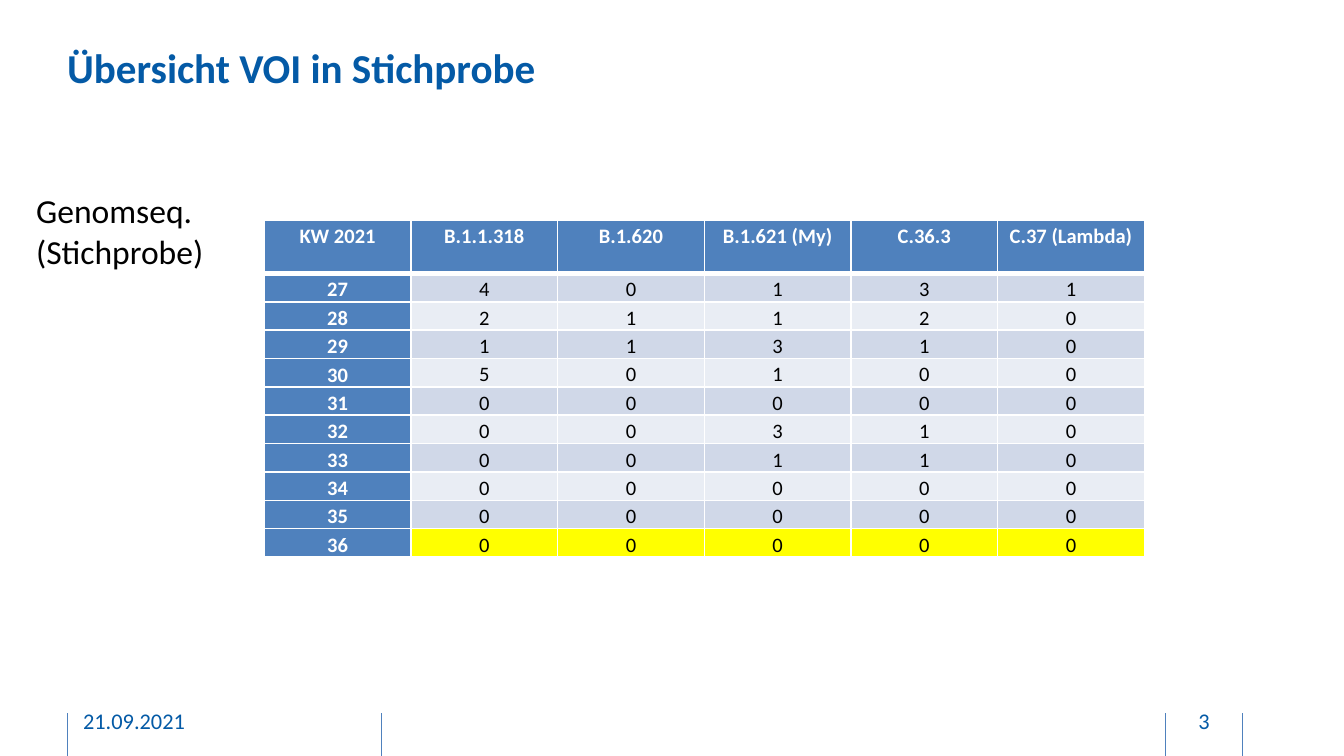
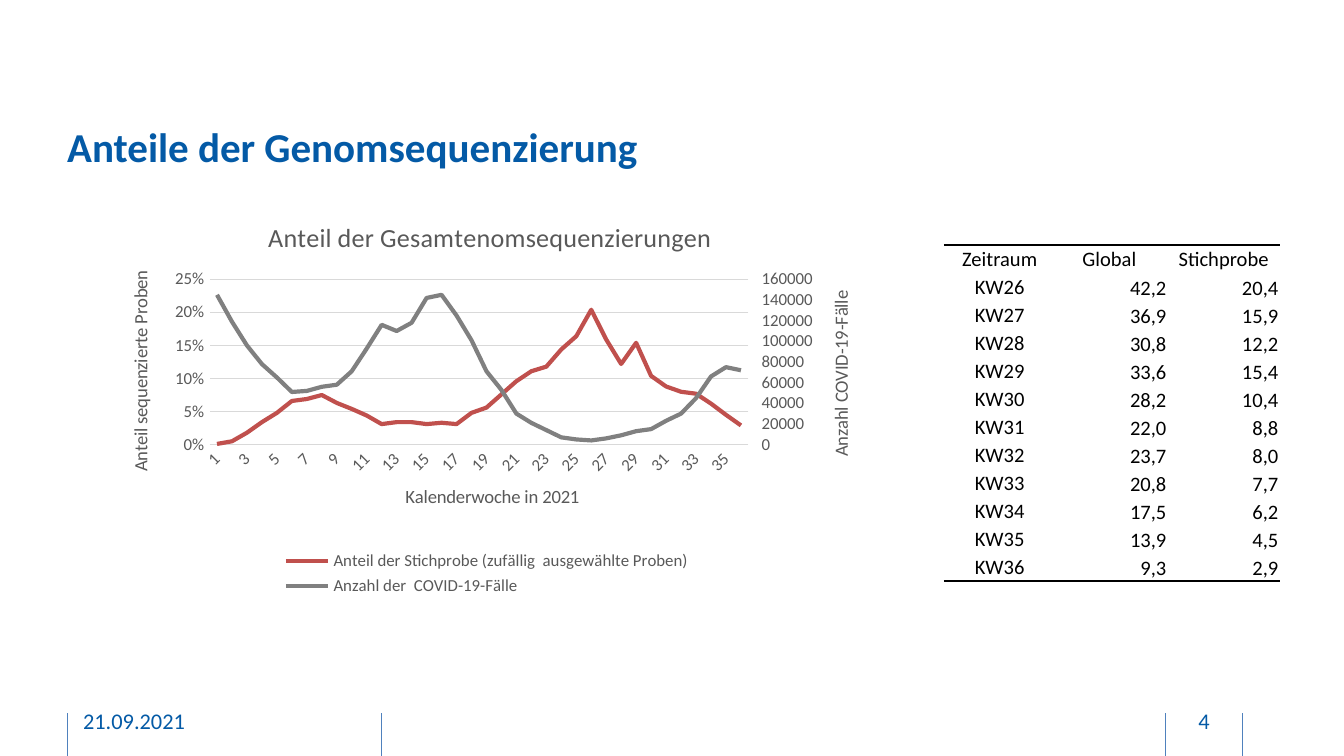
from copy import deepcopy

from lxml import etree
from pptx import Presentation
from pptx.chart import axis as ax_api
from pptx.chart.data import CategoryChartData
from pptx.dml.color import RGBColor
from pptx.enum import chart as ch, shapes, text
from pptx.oxml import parse_xml
from pptx.oxml.ns import nsdecls, qn
from pptx.util import Pt

FONT = "Calibri"
PLAIN_TABLE = "{2D5ABB26-0587-4C30-8999-92F81FD0307C}"
BLUE, ACCENT, WHITE, BLACK = "045AA6", "4F81BD", "FFFFFF", "000000"
BAND_DARK, BAND_LIGHT, YELLOW = "D0D8E8", "E9EDF4", "FFFF00"
GREY, GRID, RED, LINE_GREY = "595959", "D9D9D9", "C0504D", "808080"
LEFT, CENTER, RIGHT = text.PP_ALIGN.LEFT, text.PP_ALIGN.CENTER, text.PP_ALIGN.RIGHT
TOP, MIDDLE, BOTTOM = text.MSO_ANCHOR.TOP, text.MSO_ANCHOR.MIDDLE, text.MSO_ANCHOR.BOTTOM
DATE = "21.09.2021"

VARIANTS = ["KW 2021", "B.1.1.318", "B.1.620", "B.1.621 (My)", "C.36.3", "C.37 (Lambda)"]
VOI_COUNTS = [
    (27, 4, 0, 1, 3, 1), (28, 2, 1, 1, 2, 0), (29, 1, 1, 3, 1, 0), (30, 5, 0, 1, 0, 0),
    (31, 0, 0, 0, 0, 0), (32, 0, 0, 3, 1, 0), (33, 0, 0, 1, 1, 0), (34, 0, 0, 0, 0, 0),
    (35, 0, 0, 0, 0, 0), (36, 0, 0, 0, 0, 0),
]
SHARE_ROWS = [
    ("Zeitraum", "Global ", "Stichprobe"),
    ("KW26", "42,2", "20,4"), ("KW27", "36,9", "15,9"), ("KW28", "30,8", "12,2"),
    ("KW29", "33,6", "15,4"), ("KW30", "28,2", "10,4"), ("KW31", "22,0", "8,8"),
    ("KW32", "23,7", "8,0"), ("KW33", "20,8", "7,7"), ("KW34", "17,5", "6,2"),
    ("KW35", "13,9", "4,5"), ("KW36", "9,3", "2,9"),
]
SAMPLE_SHARE = [
    0.001, 0.005, 0.018, 0.034, 0.048, 0.066, 0.069, 0.075, 0.063, 0.054, 0.044, 0.031,
    0.034, 0.034, 0.031, 0.033, 0.031, 0.048, 0.056, 0.076, 0.096, 0.111, 0.118, 0.144,
    0.164, 0.204, 0.159, 0.122, 0.154, 0.104, 0.088, 0.08, 0.077, 0.062, 0.045, 0.029,
]
CASES_THOUSAND = [
    145, 119, 96, 78, 65, 51, 52, 56, 58, 71, 93, 116, 110, 118, 142, 145, 125, 101,
    71, 53, 30, 21, 14, 7, 5, 4, 6, 9, 13, 15, 23, 30, 45, 66, 75, 72,
]


def rgb(value):
    """Turn a hex string into a colour."""
    return RGBColor.from_string(value)


def set_attrs(obj, **values):
    """Set several attributes of one object."""
    for name, value in values.items():
        setattr(obj, name, value)


def set_font(font, size, color, bold=False):
    """Give a font the deck's typeface, a size and a colour."""
    set_attrs(font, name=FONT, size=Pt(size), bold=bold)
    font.color.rgb = rgb(color)


def write(tf, content, size, color, bold=False, align=LEFT, spacing=None):
    """Fill a text frame with one formatted paragraph."""
    p = tf.paragraphs[0]
    p.text = content
    set_attrs(p, alignment=align, line_spacing=spacing)
    for r in p.runs:
        set_font(r.font, size, color, bold)


def set_frame(tf, anchor, left=0, top=0, right=0, bottom=0):
    """Set the anchor and the insets of a text frame or cell."""
    set_attrs(tf, vertical_anchor=anchor, margin_left=Pt(left), margin_top=Pt(top),
              margin_right=Pt(right), margin_bottom=Pt(bottom))


def add_title(s, content, top):
    """Place and format the slide title."""
    sp = s.shapes.title
    set_attrs(sp, left=Pt(36), top=Pt(top), width=Pt(628.5), height=Pt(56))
    set_frame(sp.text_frame, MIDDLE)
    write(sp.text_frame, content, 22, BLUE, True)


def add_footer(s, number, top=375, bottom=405):
    """Draw the footer rules, the date and the slide number."""
    for x in (36, 204.5, 624.3, 665.8):
        c = s.shapes.add_connector(shapes.MSO_CONNECTOR.STRAIGHT,
                                   Pt(x), Pt(top + 7), Pt(x), Pt(bottom))
        set_attrs(c.line, width=Pt(0.5))
        c.line.color.rgb = rgb(ACCENT)
        etree.SubElement(c._element.spPr, qn("a:effectLst"))
    for x, w, content, align in ((44.5, 146, DATE, LEFT), (625.5, 39, str(number), CENTER)):
        tf = s.shapes.add_textbox(Pt(x), Pt(top), Pt(w), Pt(22)).text_frame
        tf.word_wrap = True
        set_frame(tf, MIDDLE, top=3.6, bottom=3.6)
        write(tf, content, 12, BLUE, align=align)


def set_borders(cell, **sides):
    """Set cell borders from side=(colour, points)."""
    tcPr = cell._tc.get_or_add_tcPr()
    for i, side in enumerate(s for s in "LRTB" if s in sides):
        color, width = sides[side]
        tcPr.insert(i, parse_xml(
            f'<a:ln{side} {nsdecls("a")} w="{Pt(width)}"><a:solidFill>'
            f'<a:srgbClr val="{color}"/></a:solidFill></a:ln{side}>'))


def new_table(s, box, heights, n_cols):
    """Add an unstyled table with equal columns and given row heights."""
    x, y, w = box
    tbl = s.shapes.add_table(len(heights), n_cols, Pt(x), Pt(y), Pt(w),
                             Pt(sum(heights))).table
    set_attrs(tbl, first_row=False, horz_banding=False)
    tbl._tbl.tblPr.find(qn("a:tableStyleId")).text = PLAIN_TABLE
    for col in tbl.columns:
        col.width = Pt(w / n_cols)
    for row, h in zip(tbl.rows, heights):
        row.height = Pt(h)
    return tbl


def add_voi_table(s, box):
    """Build the table of variant counts per calendar week."""
    rows = [VARIANTS] + VOI_COUNTS
    last = len(rows) - 1
    tbl = new_table(s, box, [28.5] + [15.2] * last, len(VARIANTS))
    for i, row in enumerate(rows):
        band = YELLOW if i == last else BAND_DARK if i % 2 else BAND_LIGHT
        for j, value in enumerate(row):
            cell = tbl.cell(i, j)
            head = i == 0 or j == 0
            inset = 3.6 if head or i == last else 0
            set_frame(cell, TOP if head else BOTTOM, left=inset, right=inset)
            write(cell.text_frame, str(value), 11, WHITE if head else BLACK, head, CENTER, 1.15)
            cell.fill.solid()
            cell.fill.fore_color.rgb = rgb(ACCENT if head else band)
            thin, thick = (WHITE, 1), (WHITE, 3)
            set_borders(cell, L=thin, R=thin, T=thick if i == 1 else thin,
                        B=thick if i == 0 else thin)


def add_share_table(s, box):
    """Build the ruled table of sequencing shares."""
    last = len(SHARE_ROWS) - 1
    tbl = new_table(s, box, [15] * (last + 1), 3)
    for i, row in enumerate(SHARE_ROWS):
        for j, value in enumerate(row):
            cell = tbl.cell(i, j)
            label = i == 0 or j == 0
            set_frame(cell, MIDDLE if label else BOTTOM, 0.7, 0.7, 0.7)
            write(cell.text_frame, value, 11, BLACK, align=CENTER if label else RIGHT)
            cell.fill.background()
            rule = {0: "T", last: "B"}.get(i)
            if rule:
                set_borders(cell, **{rule: (BLACK, 1)})


def set_layout(el, x, y, w=None, h=None):
    """Place a chart part by fractions of the chart area."""
    for old in el.findall(qn("c:layout")):
        el.remove(old)
    is_plot = el.tag == qn("c:plotArea")
    parts = '<c:layoutTarget val="inner"/>' if is_plot else ""
    parts += '<c:xMode val="edge"/><c:yMode val="edge"/>'
    sizes = (("x", x), ("y", y), ("w", w), ("h", h))
    parts += "".join(f'<c:{k} val="{v}"/>' for k, v in sizes if v is not None)
    el.insert(0 if is_plot else 1, parse_xml(
        f'<c:layout {nsdecls("c")}><c:manualLayout>{parts}</c:manualLayout></c:layout>'))


def title_part(title, content, size, x, y, rotated=False):
    """Write and place the title of a chart or an axis."""
    write(title.text_frame, content, size, GREY)
    if rotated:
        title.text_frame._txBody.find(qn("a:bodyPr")).set("rot", "-5400000")
    set_layout(title._element, x, y)


def add_second_axis(plot_area):
    """Move the second series to a value axis on the right."""
    line, cat, val = (plot_area.find(qn(t)) for t in ("c:lineChart", "c:catAx", "c:valAx"))
    line2, cat2, val2 = map(deepcopy, (line, cat, val))
    line.remove(line.findall(qn("c:ser"))[1])
    line2.remove(line2.findall(qn("c:ser"))[0])
    ids = {cat.find(qn("c:axId")).get("val"): "50010", val.find(qn("c:axId")).get("val"): "50020"}
    for el in (line2, cat2, val2):
        for ref in el.findall(qn("c:axId")) + el.findall(qn("c:crossAx")):
            ref.set("val", ids[ref.get("val")])
    line.addnext(line2)
    val.addnext(val2)
    val2.addnext(cat2)
    hidden, right = ax_api.CategoryAxis(cat2), ax_api.ValueAxis(val2)
    set_attrs(hidden, has_title=False, visible=False)
    set_attrs(right, has_major_gridlines=False, maximum_scale=160000, major_unit=20000,
              major_tick_mark=ch.XL_TICK_MARK.OUTSIDE,
              tick_label_position=ch.XL_TICK_LABEL_POSITION.HIGH)
    val2.find(qn("c:axPos")).set("val", "r")
    for old in val2.findall(qn("c:crosses")):
        val2.remove(old)
    val2.find(qn("c:crossAx")).addnext(parse_xml(f'<c:crosses {nsdecls("c")} val="max"/>'))
    right.tick_labels.number_format = "General"
    title_part(right.axis_title, "Anzahl COVID-19-Fälle", 10, 0.94, 0.22, True)


def add_share_chart(s, box):
    """Build the line chart of sample share against case numbers."""
    data = CategoryChartData()
    data.categories = [str(week) for week in range(1, 37)]
    data.add_series("Anteil der Stichprobe (zufällig  ausgewählte Proben)", SAMPLE_SHARE, "0%")
    data.add_series("Anzahl der  COVID-19-Fälle", [n * 1000 for n in CASES_THOUSAND], "General")
    chart = s.shapes.add_chart(ch.XL_CHART_TYPE.LINE, *map(Pt, box), data).chart
    set_font(chart.font, 10, BLACK)
    set_attrs(chart, has_title=True, has_legend=True)
    title_part(chart.chart_title, "Anteil der Gesamtenomsequenzierungen", 14, 0.21, 0.04)
    set_attrs(chart.legend, position=ch.XL_LEGEND_POSITION.BOTTOM, include_in_layout=False)
    set_font(chart.legend.font, 9, GREY)
    set_layout(chart.legend._element, 0.22, 0.86, 0.56, 0.14)

    chart.plots[0].vary_by_categories = False
    for ser, color in zip(chart.plots[0].series, (RED, LINE_GREY)):
        ser.smooth = False
        ser.format.line.width = Pt(2.25)
        ser.format.line.color.rgb = rgb(color)

    cat, val = chart.category_axis, chart.value_axis
    for ax in (cat, val):
        ax.major_tick_mark = ch.XL_TICK_MARK.NONE
        set_font(ax.tick_labels.font, 9, GREY)
    cat._element.find(qn("c:txPr")).find(qn("a:bodyPr")).set("rot", "-2700000")
    set_attrs(val, minimum_scale=0, maximum_scale=0.25, major_unit=0.05, has_major_gridlines=True)
    set_attrs(val.tick_labels, number_format="0%", number_format_is_linked=False)
    val.format.line.fill.background()
    for line in (cat.format.line, val.major_gridlines.format.line):
        line.width = Pt(0.75)
        line.color.rgb = rgb(GRID)
    title_part(cat.axis_title, "Kalenderwoche in 2021", 10, 0.39, 0.7)
    title_part(val.axis_title, "Anteil sequenzierte Proben", 10, 0.03, 0.17, True)

    plot_area = chart._chartSpace.chart.plotArea
    set_layout(plot_area, 0.14, 0.2, 0.7, 0.41)
    add_second_axis(plot_area)


def add_sample_label(s, box):
    """Write the label beside the variant table."""
    tf = s.shapes.add_textbox(*map(Pt, box)).text_frame
    set_attrs(tf, word_wrap=False, auto_size=text.MSO_AUTO_SIZE.SHAPE_TO_FIT_TEXT)
    write(tf, "Genomseq.\v(Stichprobe)", 18, BLACK)


def new_slide(prs, title, title_top, number):
    """Add a slide with title and footer."""
    s = prs.slides.add_slide(prs.slide_layouts[5])
    add_footer(s, number)
    add_title(s, title, title_top)
    return s


def voi_slide(prs):
    """Build the overview of variants of interest."""
    s = new_slide(prs, "Übersicht VOI in Stichprobe", 8, 3)
    add_sample_label(s, (12.3, 98.3, 105, 51))
    add_voi_table(s, (141.6, 118, 471.6))


def share_slide(prs):
    """Build the slide on sequencing shares."""
    s = new_slide(prs, "Anteile der Genomsequenzierung", 50.5, 4)
    add_share_table(s, (505.6, 131.2, 180))
    add_share_chart(s, (54.5, 106.5, 412.5, 216))


def main():
    """Build and save the deck."""
    prs = Presentation()
    set_attrs(prs, slide_width=Pt(720), slide_height=Pt(405))
    voi_slide(prs)
    share_slide(prs)
    prs.save("out.pptx")


if __name__ == "__main__":
    main()
